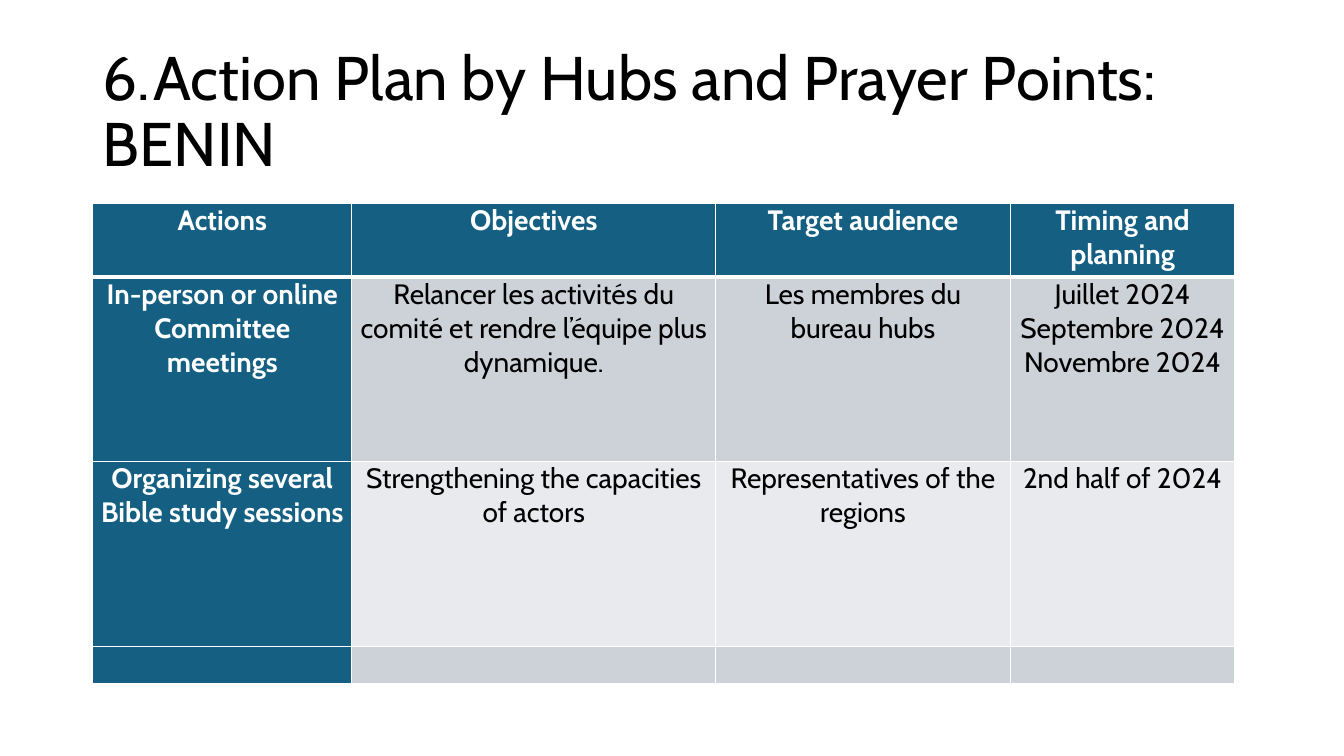
from dataclasses import dataclass

from lxml import etree
from pptx import Presentation
from pptx.dml.color import RGBColor
from pptx.enum.text import MSO_ANCHOR, MSO_AUTO_SIZE, PP_ALIGN
from pptx.oxml.ns import qn
from pptx.util import Inches, Pt

CENTER, LEFT = PP_ALIGN.CENTER, PP_ALIGN.LEFT
MIDDLE = MSO_ANCHOR.MIDDLE
NO_AUTOFIT = MSO_AUTO_SIZE.NONE
TITLE_ONLY = 5


@dataclass(frozen=True)
class Theme:
    font: str = "Cabin"
    title_size: int = 44
    table_size: int = 20
    ink: str = "000000"
    paper: str = "FFFFFF"
    heading: str = "156082"
    bands: tuple = ("CCD2D8", "E8EAED")
    rule: float = 1
    heading_rule: float = 3


theme = Theme()


def add_run(paragraph, text, size, color, bold=False):
    run = paragraph.add_run()
    run.text = text
    run.font.name = theme.font
    run.font.size = Pt(size)
    run.font.bold = bold
    run.font.color.rgb = RGBColor.from_string(color)


def add_border(cell, side, width):
    line = etree.SubElement(cell._tc.get_or_add_tcPr(), qn(f"a:ln{side}"), w=str(Pt(width)))
    solid = etree.SubElement(line, qn("a:solidFill"))
    etree.SubElement(solid, qn("a:srgbClr"), val=theme.paper)


prs = Presentation()
prs.slide_width, prs.slide_height = Inches(13.33), Inches(7.5)
slide = prs.slides.add_slide(prs.slide_layouts[TITLE_ONLY])
margin = Inches(0.92)

# Title
title = slide.shapes.title
title.left, title.top = margin, Inches(0.4)
title.width, title.height = Inches(11.5), Inches(1.45)
title.text_frame.vertical_anchor = MIDDLE
title.text_frame.auto_size = NO_AUTOFIT
title.text_frame.word_wrap = True
heading = title.text_frame.paragraphs[0]
heading.alignment = LEFT
heading.line_spacing = 0.9
add_run(heading, "6.\tAction Plan by Hubs and Prayer Points: BENIN", theme.title_size, theme.ink)

# Action plan: one list entry per row, one line per paragraph
plan = [
    ["Actions", "Objectives", "Target audience", "Timing and planning"],
    ["In-person or online Committee meetings",
     "Relancer les activités du comité et rendre l’équipe plus dynamique.",
     "Les membres du bureau hubs",
     "Juillet 2024\nSeptembre 2024\nNovembre 2024"],
    ["Organizing several Bible study sessions",
     "Strengthening the capacities of actors",
     "Representatives of the regions",
     "2nd half of 2024"],
    ["", "", "", ""],
]
column_widths = [2.57, 3.61, 2.92, 2.23]
row_heights = [0.73, 1.83, 1.83, 0.37]

plan_table = slide.shapes.add_table(
    len(plan), len(column_widths), margin, Inches(2.02),
    Inches(sum(column_widths)), Inches(sum(row_heights))).table
for column, width in zip(plan_table.columns, column_widths):
    column.width = Inches(width)
for row, height in zip(plan_table.rows, row_heights):
    row.height = Inches(height)

# Cells: heading colour in the first row and column, alternating bands elsewhere
for r, entries in enumerate(plan):
    for c, entry in enumerate(entries):
        cell = plan_table.cell(r, c)
        is_heading = r == 0 or c == 0
        cell.margin_left = cell.margin_right = Inches(0.07)
        cell.margin_top = cell.margin_bottom = 0

        top_rule = theme.heading_rule if r == 1 else theme.rule
        bottom_rule = theme.heading_rule if r == 0 else theme.rule
        for side, width in zip("LRTB", (theme.rule, theme.rule, top_rule, bottom_rule)):
            add_border(cell, side, width)

        fill = theme.heading if is_heading else theme.bands[(r - 1) % 2]
        cell.fill.solid()
        cell.fill.fore_color.rgb = RGBColor.from_string(fill)

        for i, line in enumerate(entry.splitlines()):
            frame = cell.text_frame
            paragraph = frame.add_paragraph() if i else frame.paragraphs[0]
            paragraph.alignment = CENTER
            add_run(paragraph, line, theme.table_size,
                    theme.paper if is_heading else theme.ink, is_heading)

prs.save("out.pptx")
